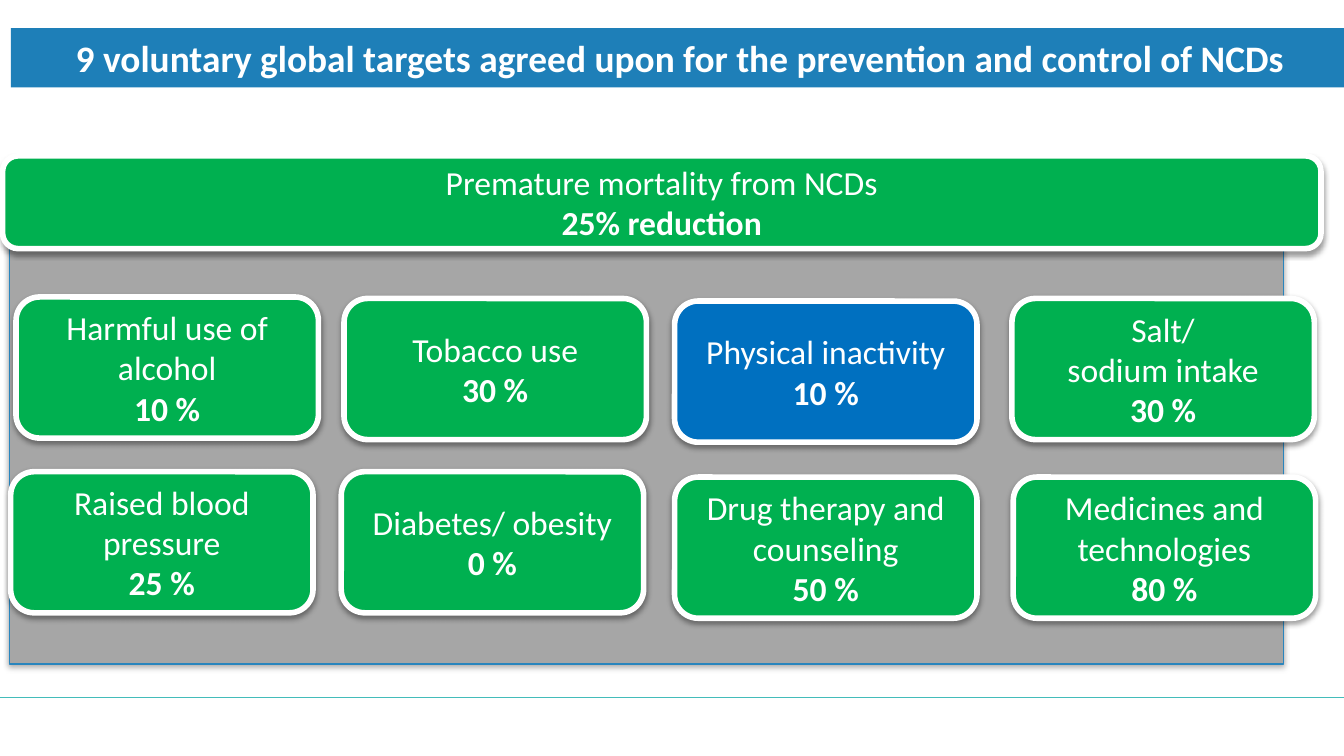
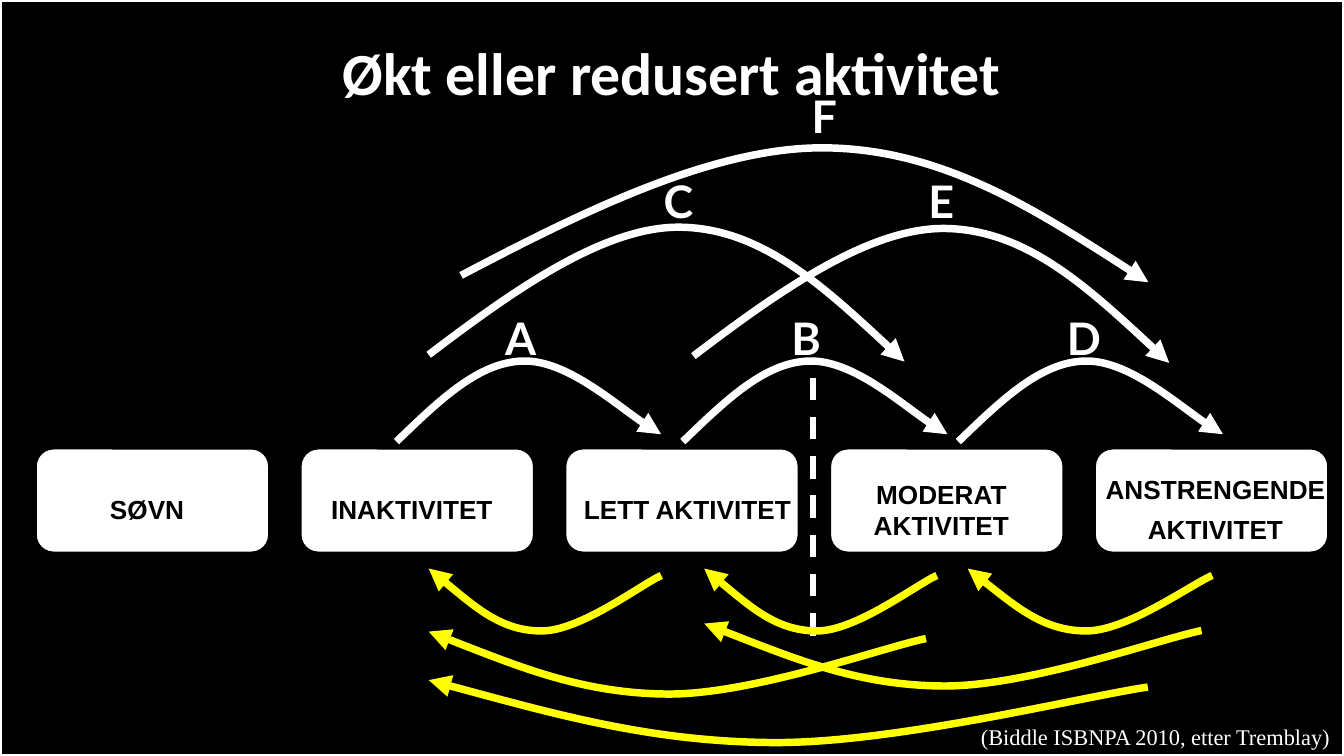
import pptx
import pptx.util
import pptx.dml.color
import pptx.enum.dml
import pptx.enum.shapes
import pptx.enum.text
import pptx.oxml.ns
import lxml.etree

Pt = pptx.util.Pt
qn = pptx.oxml.ns.qn
SHAPE = pptx.enum.shapes.MSO_SHAPE
ALIGN = pptx.enum.text.PP_ALIGN
ANCHOR = pptx.enum.text.MSO_ANCHOR

W, H = 720, 405
COLORS = {
    "white": "FFFFFF", "black": "000000", "band": "1E7FB8", "teal": "43BCBA",
    "grey": "A6A6A6", "edge": "2985BD", "green": "00B050", "blue": "0070C0",
    "yellow": "FFFF00",
}

# Curve points as fractions of the curve's box: start, then two Bezier segments
LOW_ARC = [(0, 1), (.16, .5), (.31, .02), (.48, .01), (.64, 0), (.91, .76), (1, .91)]
HIGH_ARC = [(0, .95), (.18, .47), (.37, 0), (.53, .01), (.7, .02), (.85, .51), (1, 1)]
RETURN_ARC = [(0, 0), (.16, .49), (.31, .98), (.48, .99), (.65, 1), (.91, .26), (1, .11)]


def rgb(name):
    return pptx.dml.color.RGBColor.from_string(COLORS[name])


# ---- shared helpers ----
def place(sp, left, top, width, height):
    sp.left, sp.top, sp.width, sp.height = Pt(left), Pt(top), Pt(width), Pt(height)


def paint(sp, fill=None, line=None, weight=.75):
    if fill:
        sp.fill.solid()
        sp.fill.fore_color.rgb = rgb(fill)
    else:
        sp.fill.background()
    if line:
        sp.line.color.rgb = rgb(line)
        sp.line.width = Pt(weight)
    else:
        sp.line.fill.background()


def add_box(s, kind, box, fill, line, weight=.75):
    sp = s.shapes.add_shape(kind, *map(Pt, box))
    sp.shadow.inherit = False
    paint(sp, fill, line, weight)
    return sp


def add_shadow(sp, alpha, dist):
    effects = sp._element.spPr.find(qn("a:effectLst"))
    shadow = lxml.etree.SubElement(
        effects, qn("a:outerShdw"), blurRad=str(Pt(3.1)), dist=str(Pt(dist)),
        dir="5400000", algn="ctr", rotWithShape="0")
    color = lxml.etree.SubElement(shadow, qn("a:srgbClr"), val=COLORS["black"])
    lxml.etree.SubElement(color, qn("a:alpha"), val=str(alpha * 1000))


def write(tf, text, size, font, color, bold=False, align=ALIGN.CENTER, inset=7.2):
    tf.text = text
    tf.margin_left = tf.margin_right = Pt(inset)
    for p in tf.paragraphs:
        p.alignment = align
        for r in p.runs:
            r.font.size, r.font.name, r.font.bold = Pt(size), font, bold
            r.font.color.rgb = rgb(color)


def add_text(s, box, text, size, font, color, wrap=True, **style):
    tf = s.shapes.add_textbox(*map(Pt, box)).text_frame
    tf.word_wrap = wrap
    write(tf, text, size, font, color, **style)
    return tf


def add_line(s, start, end, color, weight):
    c = s.shapes.add_connector(
        pptx.enum.shapes.MSO_CONNECTOR.STRAIGHT, *map(Pt, start + end))
    c.line.color.rgb = rgb(color)
    c.line.width = Pt(weight)
    lxml.etree.SubElement(c._element.spPr, qn("a:effectLst"))
    return c


def set_title(s, text, box, size, fill, line=None, weight=.75, top_inset=3.6):
    sp = s.shapes.title
    place(sp, *box)
    paint(sp, fill, line, weight)
    tf = sp.text_frame
    tf.auto_size = pptx.enum.text.MSO_AUTO_SIZE.NONE
    tf.vertical_anchor = ANCHOR.TOP
    tf.margin_top = Pt(top_inset)
    write(tf, text, size, "Calibri", "white", bold=True)


def add_footer_rule(prs, s):
    """Draw the footer rule and move it to the master, behind every slide."""
    rule = add_line(s, (0, 373.7), (W, 373.7), "teal", 1)
    prs.slide_master.shapes._spTree.append(rule._element)


# ---- slide 1: targets ----
def add_card(s, box, text, fill="green"):
    sp = add_box(s, SHAPE.ROUNDED_RECTANGLE, box, fill, "white", 3)
    add_shadow(sp, 38, 1.6)
    tf = sp.text_frame
    tf.vertical_anchor = ANCHOR.MIDDLE
    write(tf, text, 18, "Calibri", "white")
    tf.paragraphs[-1].runs[0].font.bold = True


def targets_panel(s, left, top, width, height):
    panel = add_box(s, SHAPE.RECTANGLE, (left, top, width, height), "grey", "edge")
    add_shadow(panel, 35, 1.8)
    # Cards: offset from the panel corner, text, fill
    cards = [
        (3.6, 59, "Harmful use of alcohol\n10 %", "green"),
        (179.3, 59.8, "Tobacco use\n30 %", "green"),
        (356.4, 61.2, "Physical inactivity\n10 %", "blue"),
        (537.1, 59.8, "Salt/\nsodium intake\n30 %", "green"),
        (.7, 152.6, "Raised blood pressure\n25 %", "green"),
        (177.8, 152.6, "Diabetes/ obesity\n0 %", "green"),
        (356.4, 155.5, "Drug therapy and counseling\n50 %", "green"),
        (537.8, 155.5, "Medicines and technologies\n80 %", "green"),
    ]
    for dx, dy, text, fill in cards:
        add_card(s, (left + dx, top + dy, 162, 75.6), text, fill)
    # Overall target across the top edge of the panel
    add_card(s, (left - 3.6, top - 16.6, 706.3, 49.7),
             "Premature mortality from NCDs\n25% reduction")


def targets_slide(prs, layout):
    s = prs.slides.add_slide(layout)
    add_footer_rule(prs, s)
    set_title(s, "9 voluntary global targets agreed upon for the prevention "
              "and control of NCDs", (5.8, 15.1, 717.1, 31.7), 20, "band")
    targets_panel(s, 5, 100.1, 682.6, 255.6)


# ---- slide 2: activity levels ----
def add_arc(s, points, left, top, width, height, color, arrow_end):
    xy = [(Pt(left + fx * width), Pt(top + fy * height)) for fx, fy in points]
    fb = s.shapes.build_freeform(*xy[0])
    fb.add_line_segments(xy[1:], close=False)
    sp = fb.convert_to_shape()
    # Each three straight segments become one cubic curve
    segments = list(sp._element.iter(qn("a:lnTo")))
    outline = segments[0].getparent()
    for i in range(0, len(segments), 3):
        curve = lxml.etree.SubElement(outline, qn("a:cubicBezTo"))
        for seg in segments[i:i + 3]:
            curve.append(seg[0])
            outline.remove(seg)
    sp.shadow.inherit = False
    paint(sp, None, color, 4)
    ln = sp._element.spPr.find(qn("a:ln"))
    lxml.etree.SubElement(ln, qn(f"a:{arrow_end}"), type="triangle")


def stage_row(s, left, top, width, height):
    pitch = 141.84
    # Label text, then its box relative to the stage, then side inset
    stages = [
        ("SØVN", 0, 20.2, 118.8, 24.5, 7.2),
        ("INAKTIVITET", 0, 20.2, 118.8, 24.5, 1.44),
        ("LETT AKTIVITET", 5.8, 20.2, 118.8, 24.5, 1.44),
        ("MODERAT AKTIVITET", 0, 12.2, 118.8, 41, 1.44),
        ("ANSTRENGENDE\nAKTIVITET", -2.2, 9.4, 133.2, 46, 1.44),
    ]
    for i in range(len(stages)):
        add_box(s, SHAPE.FLOWCHART_ALTERNATE_PROCESS,
                (left + i * pitch, top, width, height), "white", "black")
    for i, (text, dx, dy, w, h, inset) in enumerate(stages):
        tf = add_text(s, (left + i * pitch + dx, top + dy, w, h), text, 14,
                      "Arial", "black", bold=True, inset=inset)
        for p in tf.paragraphs[1:]:
            p.space_before = Pt(4.5)


def increase_arcs(s, left, top):
    # Arc points, arc box, letter, letter position
    arcs = [
        (LOW_ARC, 0, 114.5, 141.8, 43.6, "A", 51.1, 84.2),
        (LOW_ARC, 153.4, 114.5, 141.8, 43.6, "B", 204.5, 84.2),
        (LOW_ARC, 301, 114.5, 141.8, 43.6, "D", 352.1, 84.2),
        (HIGH_ARC, 17.3, 42.5, 254.9, 72.7, "C", 136.1, 10.8),
        (HIGH_ARC, 159.1, 43.2, 254.9, 72.7, "E", 277.9, 10.8),
        (HIGH_ARC, 34.6, 0, 368.2, 72.7, "F", 215.3, -34.6),
    ]
    for points, dx, dy, w, h, letter, tx, ty in arcs:
        add_arc(s, points, left + dx, top + dy, w, h, "white", "tailEnd")
        add_text(s, (left + tx, top + ty, 33.8, 36), letter, 24, "Lato",
                 "white", bold=True, align=ALIGN.LEFT)


def decrease_arcs(s, left, top):
    arcs = [(0, 0, 124.6), (147.6, 0, 124.6), (288.7, 0, 131),
            (0, 33.8, 266.4), (0, 59.8, 385.2), (147.6, 29.5, 266.4)]
    for dx, dy, w in arcs:
        add_arc(s, RETURN_ARC, left + dx, top + dy, w, 33.8, "yellow", "headEnd")


def activity_slide(prs, layout):
    s = prs.slides.add_slide(layout)
    set_title(s, "Økt eller redusert aktivitet", (0, 0, W, H), 32, "black",
              "white", 2.5, top_inset=19)
    stage_row(s, 19.4, 240.5, 124.6, 55.4)
    # Threshold between light and moderate activity
    threshold = add_line(s, (435.6, 202.3), (435.6, 340.6), "white", 3)
    threshold.line.dash_style = pptx.enum.dml.MSO_LINE.DASH
    increase_arcs(s, 212.4, 78.5)
    decrease_arcs(s, 229.7, 304.6)
    # Source
    add_text(s, (518.4, 383.8, 203.8, 21.6), "(Biddle ISBNPA 2010, etter Tremblay)",
             12, "Times New Roman", "white", wrap=False, align=ALIGN.LEFT)


def main():
    prs = pptx.Presentation()
    prs.slide_width, prs.slide_height = Pt(W), Pt(H)
    title_only = prs.slide_layouts[5]
    targets_slide(prs, title_only)
    activity_slide(prs, title_only)
    prs.save("out.pptx")


if __name__ == "__main__":
    main()
